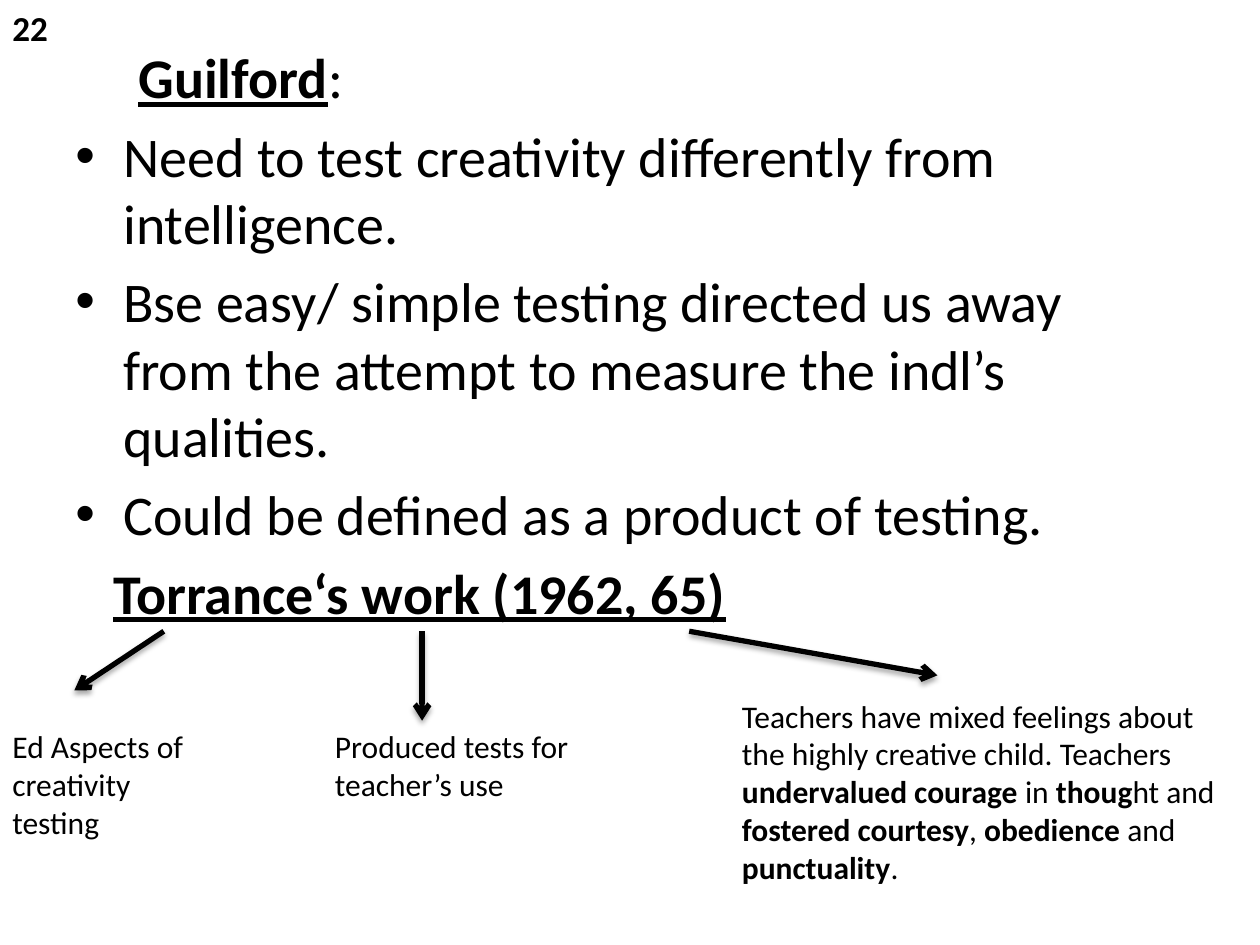
from lxml.etree import SubElement
from pptx import Presentation
from pptx.dml.color import RGBColor
from pptx.enum.shapes import MSO_CONNECTOR
from pptx.enum.text import MSO_AUTO_SIZE
from pptx.oxml.ns import qn
from pptx.util import Inches, Pt

BLACK = "000000"
INDENT = 0.38
HEADING_GAP = 0.3


def color(hex_value):
    return RGBColor.from_string(hex_value)


def add_runs(paragraph, runs, size):
    """Each run is (text, format values that differ from the default)."""
    for text, changes in runs:
        run = paragraph.add_run()
        run.text = text
        font = run.font
        values = {"name": "Calibri", "size": Pt(size), "bold": False, **changes}
        for name, value in values.items():
            setattr(font, name, value)
        font.color.rgb = color(BLACK)


def add_frame(slide, box, auto_size):
    frame = slide.shapes.add_textbox(*map(Inches, box)).text_frame
    frame.word_wrap = True
    frame.auto_size = auto_size
    return frame


def add_label(slide, box, runs, size=18):
    frame = add_frame(slide, box, MSO_AUTO_SIZE.SHAPE_TO_FIT_TEXT)
    add_runs(frame.paragraphs[0], runs, size)


def set_indent(paragraph, margin, first_line=0):
    properties = paragraph._p.get_or_add_pPr()
    properties.set("marL", str(Inches(margin)))
    properties.set("indent", str(Inches(first_line)))
    return properties


def add_body(slide, box):
    heading = {"bold": True, "underline": True}
    # (kind, runs) for each paragraph
    content = [
        ("tabbed", [("\tGuilford", heading), (":", {})]),
        ("bullet", [("Need to test creativity differently from intelligence.", {})]),
        ("bullet", [("Bse easy/ simple testing directed us away from the attempt "
                     "to measure the indl’s qualities.", {})]),
        ("bullet", [("Could be defined as a product of testing.", {})]),
        ("indented", [("Torrance‘s work (1962, 65)", heading)]),
    ]
    frame = add_frame(slide, box, MSO_AUTO_SIZE.NONE)
    for index, (kind, runs) in enumerate(content):
        paragraph = frame.add_paragraph() if index else frame.paragraphs[0]
        paragraph.space_before = Pt(6.4)
        if kind == "bullet":
            properties = set_indent(paragraph, INDENT, -INDENT)
            SubElement(properties, qn("a:buFont"), typeface="Arial")
            SubElement(properties, qn("a:buChar"), char="•")
        elif kind == "tabbed":
            # The underline runs through the gap before the heading
            tabs = SubElement(set_indent(paragraph, 0), qn("a:tabLst"))
            SubElement(tabs, qn("a:tab"), pos=str(Inches(HEADING_GAP)), algn="l")
        else:
            set_indent(paragraph, HEADING_GAP)
        add_runs(paragraph, runs, 32)


def add_arrow(slide, start, end):
    arrow = slide.shapes.add_connector(
        MSO_CONNECTOR.STRAIGHT, *map(Inches, start + end))
    arrow.line.color.rgb = color(BLACK)
    arrow.line.width = Pt(3)
    SubElement(arrow.line._get_or_add_ln(), qn("a:tailEnd"), type="arrow")
    # Soft shadow straight below the line
    effects = SubElement(arrow._element.spPr, qn("a:effectLst"))
    shadow = SubElement(effects, qn("a:outerShdw"), blurRad=str(Pt(3.1)),
                        dist=str(Pt(1.8)), dir="5400000", rotWithShape="0")
    tint = SubElement(shadow, qn("a:srgbClr"), val=BLACK)
    SubElement(tint, qn("a:alpha"), val="35000")


def add_branches(slide, top):
    """Three arrows from the Torrance heading to their notes."""
    bold = {"bold": True}
    branches = [
        (1.3, (0.59, 5.48), (0, 5.72, 1.85, 1.01),
         [("Ed Aspects of creativity testing", {})]),
        (3.35, (3.35, 5.72), (2.56, 5.72, 2.28, 0.71),
         [("Produced tests for teacher’s use", {})]),
        (5.47, (7.44, 5.36), (5.79, 5.48, 4.02, 1.62),
         [("Teachers have mixed feelings about the highly creative child. "
           "Teachers ", {}),
          ("undervalued courage ", bold), ("in ", {}),
          ("thoug", bold), ("ht and ", {}),
          ("fostered courtesy", bold), (", ", {}),
          ("obedience", bold), (" and ", {}),
          ("punctuality", bold), (".", {})]),
    ]
    for start_x, end, box, runs in branches:
        add_arrow(slide, (start_x, top), end)
        add_label(slide, box, runs)


def main():
    deck = Presentation()
    deck.slide_width, deck.slide_height = Inches(10), Inches(7.5)
    slide = deck.slides.add_slide(deck.slide_layouts[6])
    add_body(slide, (0.5, 0.29, 9, 6.41))
    add_branches(slide, 5.01)
    # Slide number
    add_label(slide, (0, 0, 0.59, 0.44), [("22", {"bold": True})], 20)
    deck.save("out.pptx")


if __name__ == "__main__":
    main()
